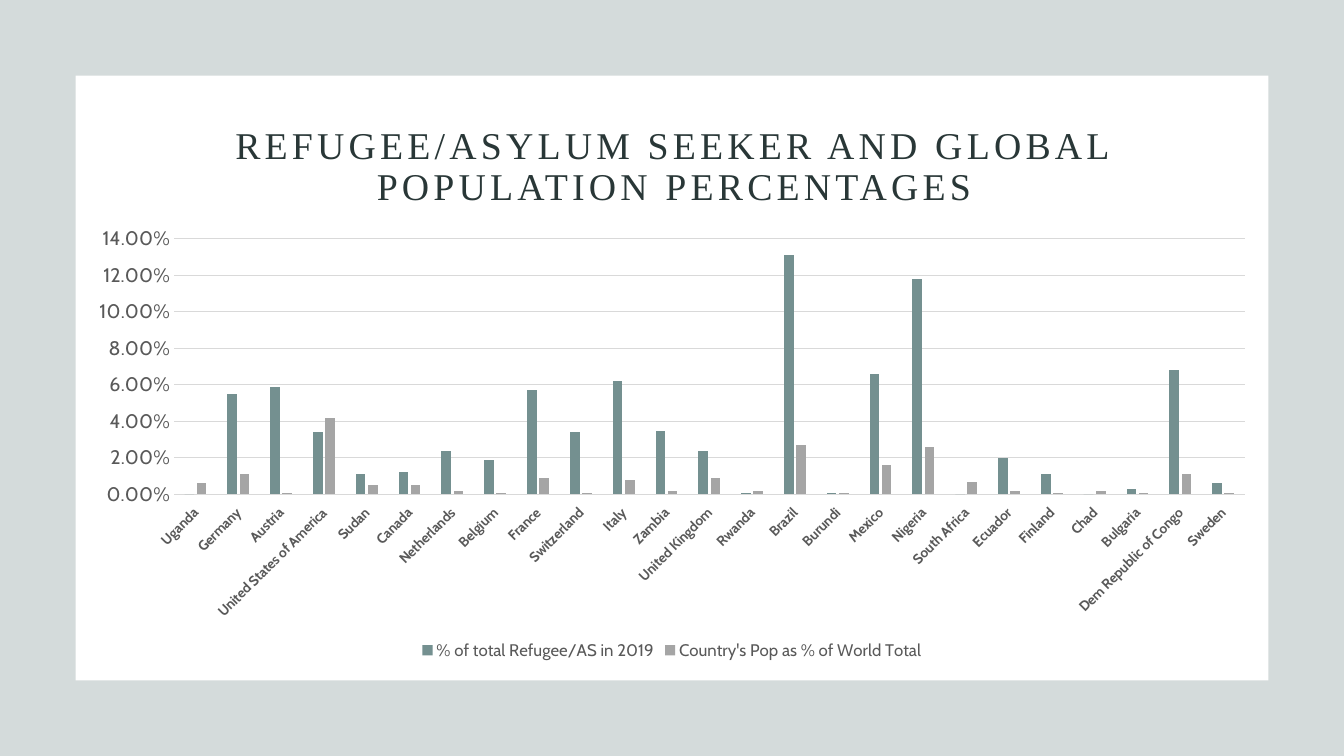
"""Build a slide comparing refugee and world population shares by country."""
import pptx
import pptx.chart.data
import pptx.dml.color
import pptx.enum.chart
import pptx.enum.shapes
import pptx.enum.text
import pptx.oxml.ns
import pptx.util
from lxml import etree

Pt = pptx.util.Pt
RGBColor = pptx.dml.color.RGBColor
TEAL = RGBColor(0x55, 0x72, 0x72)
WHITE = RGBColor(0xFF, 0xFF, 0xFF)
TITLE_INK = RGBColor(0x29, 0x37, 0x37)
LABEL_GRAY = RGBColor(0x59, 0x59, 0x59)
LINE_GRAY = RGBColor(0xD9, 0xD9, 0xD9)
REFUGEE_BAR = RGBColor(0x74, 0x90, 0x90)
POPULATION_BAR = RGBColor(0xA5, 0xA5, 0xA5)

TITLE = "REFUGEE/ASYLUM SEEKER AND GLOBAL POPULATION PERCENTAGES"
SERIES = (
    ("% of total Refugee/AS in 2019", REFUGEE_BAR),
    ("Country's Pop as % of World Total", POPULATION_BAR),
)
COUNTRIES = (
    ("Uganda", 0, 0.006),
    ("Germany", 0.055, 0.011),
    ("Austria", 0.059, 0.001),
    ("United States of America", 0.034, 0.042),
    ("Sudan", 0.011, 0.005),
    ("Canada", 0.012, 0.005),
    ("Netherlands", 0.024, 0.002),
    ("Belgium", 0.019, 0.001),
    ("France", 0.057, 0.009),
    ("Switzerland", 0.034, 0.001),
    ("Italy", 0.062, 0.008),
    ("Zambia", 0.035, 0.002),
    ("United Kingdom", 0.024, 0.009),
    ("Rwanda", 0.001, 0.002),
    ("Brazil", 0.131, 0.027),
    ("Burundi", 0.001, 0.001),
    ("Mexico", 0.066, 0.016),
    ("Nigeria", 0.118, 0.026),
    ("South Africa", 0, 0.007),
    ("Ecuador", 0.02, 0.002),
    ("Finland", 0.011, 0.001),
    ("Chad", 0, 0.002),
    ("Bulgaria", 0.003, 0.001),
    ("Dem Republic of Congo", 0.068, 0.011),
    ("Sweden", 0.006, 0.001),
)


def style_font(font, name, size, color, bold=False):
    """Apply a typeface, size, colour and weight to a font."""
    font.name = name
    font.size = Pt(size)
    font.color.rgb = color
    font.bold = bold


def add_panel(slide, left, top, width, height, color, opacity=100):
    """Add a borderless filled rectangle with the given opacity percentage."""
    shape = slide.shapes.add_shape(
        pptx.enum.shapes.MSO_SHAPE.RECTANGLE, Pt(left), Pt(top), Pt(width), Pt(height))
    shape.shadow.inherit = False
    shape.line.fill.background()
    shape.fill.solid()
    shape.fill.fore_color.rgb = color
    if opacity < 100:
        color_element = next(shape.fill._xPr.iter(pptx.oxml.ns.qn("a:srgbClr")))
        alpha = etree.SubElement(color_element, pptx.oxml.ns.qn("a:alpha"))
        alpha.set("val", str(opacity * 1000))


def add_title(slide, left, top, width, height):
    """Add the centred, letter-spaced title."""
    text_frame = slide.shapes.add_textbox(
        Pt(left), Pt(top), Pt(width), Pt(height)).text_frame
    text_frame.word_wrap = True
    text_frame.vertical_anchor = pptx.enum.text.MSO_ANCHOR.MIDDLE
    text_frame.text = TITLE
    paragraph = text_frame.paragraphs[0]
    paragraph.alignment = pptx.enum.text.PP_ALIGN.CENTER
    paragraph.line_spacing = 0.9
    run = paragraph.runs[0]
    style_font(run.font, "Times New Roman", 27, TITLE_INK)
    run.font._element.set("spc", "300")


def style_axes(chart):
    """Format the slanted country labels, percentage scale and gridlines."""
    category_axis, value_axis = chart.category_axis, chart.value_axis
    for axis, size, bold in ((category_axis, 10, True), (value_axis, 14, False)):
        axis.major_tick_mark = pptx.enum.chart.XL_TICK_MARK.NONE
        axis.minor_tick_mark = pptx.enum.chart.XL_TICK_MARK.NONE
        style_font(axis.tick_labels.font, "Cabin", size, LABEL_GRAY, bold)
    category_axis.tick_label_position = pptx.enum.chart.XL_TICK_LABEL_POSITION.LOW
    label_body = next(category_axis._element.iter(pptx.oxml.ns.qn("a:bodyPr")))
    label_body.set("rot", "-2700000")

    value_axis.minimum_scale = 0
    value_axis.maximum_scale = 0.14
    value_axis.major_unit = 0.02
    value_axis.tick_labels.number_format = "0.00%"
    value_axis.tick_labels.number_format_is_linked = False
    value_axis.format.line.fill.background()
    for line in (category_axis.format.line, value_axis.major_gridlines.format.line):
        line.color.rgb = LINE_GRAY
        line.width = Pt(0.75)


def add_population_chart(slide, left, top, width, height):
    """Add the clustered column chart of refugee and population shares."""
    names, *columns = zip(*COUNTRIES)
    chart_data = pptx.chart.data.CategoryChartData(number_format="0.00%")
    chart_data.categories = names
    for (name, _), values in zip(SERIES, columns):
        chart_data.add_series(name, values)
    chart = slide.shapes.add_chart(
        pptx.enum.chart.XL_CHART_TYPE.COLUMN_CLUSTERED,
        Pt(left), Pt(top), Pt(width), Pt(height), chart_data).chart
    chart.has_title = False
    chart.font.name = "Cabin"
    chart.font.size = Pt(10)
    chart.has_legend = True
    chart.legend.position = pptx.enum.chart.XL_LEGEND_POSITION.BOTTOM
    chart.legend.include_in_layout = False
    style_font(chart.legend.font, "Cabin", 12, LABEL_GRAY)
    plot = chart.plots[0]
    plot.gap_width = 219
    plot.overlap = -27
    plot.vary_by_categories = False
    for series, (_, color) in zip(plot.series, SERIES):
        series.invert_if_negative = False
        series.format.fill.solid()
        series.format.fill.fore_color.rgb = color
    style_axes(chart)


def add_chart_slide(presentation, width, height, margin):
    """Add the framed slide with its title and chart."""
    slide = presentation.slides.add_slide(presentation.slide_layouts[6])
    panel_width = width - 2 * margin
    add_panel(slide, 0, 0, width, height, TEAL, 25)
    add_panel(slide, margin, margin, panel_width, height - 2 * margin, WHITE)
    add_title(slide, 2 * margin, margin + 30.2, 747, 70.6)
    add_population_chart(slide, margin, margin + 101.5, panel_width, 319)


def main():
    """Create and save the presentation."""
    presentation = pptx.Presentation()
    presentation.slide_width = Pt(960)
    presentation.slide_height = Pt(540)
    add_chart_slide(presentation, 960, 540, 54)
    presentation.save("out.pptx")


if __name__ == "__main__":
    main()
